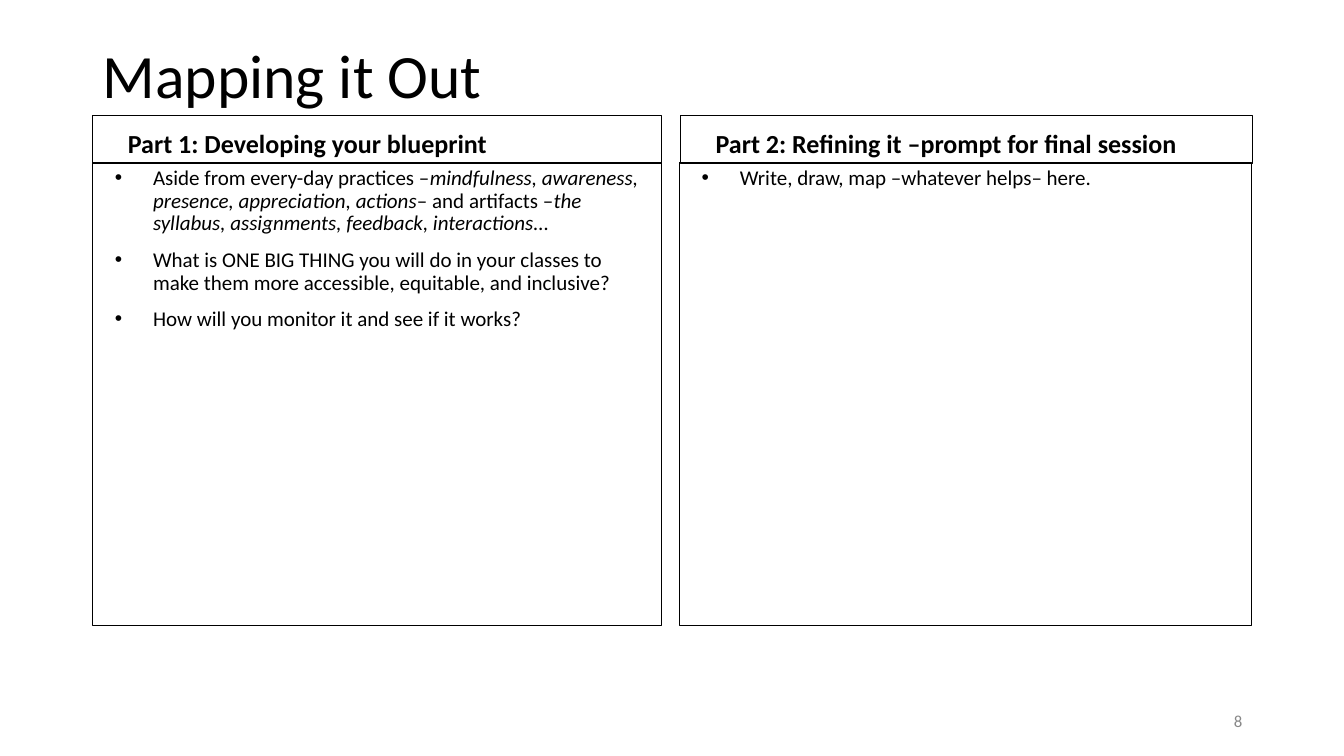
from pptx import Presentation
from pptx.dml.color import RGBColor
from pptx.enum.shapes import MSO_SHAPE
from pptx.enum.text import MSO_ANCHOR, PP_ALIGN
from pptx.oxml.ns import qn
from pptx.util import Inches, Pt
from lxml.etree import SubElement

COLORS = {"text": "000000", "border": "000000", "number": "888888"}
FONT = "Calibri"

PANEL_TOP, HEADING_H = 1.15, 0.47
BODY_TOP, BODY_H = 1.61, 4.6

# heading left, body left, width, heading, bullets as lists of (text, italic)
PANELS = [
    (0.92, 0.92, 5.64, "Part 1: Developing your blueprint", [
        [("Aside from every-day practices –", False),
         ("mindfulness, awareness, presence, appreciation, actions", True),
         ("– and artifacts –", False),
         ("the syllabus, assignments, feedback, interactions", True),
         ("…", False)],
        [("What is ONE BIG THING you will do in your classes to make them "
          "more accessible, equitable, and inclusive?", False)],
        [("How will you monitor it and see if it works?", False)],
    ]),
    (6.75, 6.74, 5.67, "Part 2: Refining it –prompt for final session", [
        [("Write, draw, map –whatever helps– here.", False)],
    ]),
]


def rgb(name):
    return RGBColor.from_string(COLORS[name])


def write(tf, paragraphs, size, color="text", bold=False, align=PP_ALIGN.LEFT,
          anchor=MSO_ANCHOR.TOP, spacing=None, before=0, margin=0, indent=0,
          bullet=None):
    """Fill a text frame with paragraphs, each a list of (text, italic) runs."""
    tf.word_wrap = True
    tf.vertical_anchor = anchor
    for i, runs in enumerate(paragraphs):
        p = tf.add_paragraph() if i else tf.paragraphs[0]
        p.alignment = align
        p.line_spacing = spacing
        p.space_before = Pt(before)
        pPr = p._p.get_or_add_pPr()
        pPr.set("marL", str(Inches(margin)))
        pPr.set("indent", str(Inches(indent)))
        if bullet:
            SubElement(pPr, qn("a:buFont")).set("typeface", "Arial")
            SubElement(pPr, qn("a:buChar")).set("char", bullet)
        for text, italic in runs:
            r = p.add_run()
            r.text = text
            r.font.name = FONT
            r.font.size = Pt(size)
            r.font.bold = bold
            r.font.italic = italic
            r.font.color.rgb = rgb(color)


class SlideBuilder:
    def __init__(self, prs):
        self.s = prs.slides.add_slide(prs.slide_layouts[6])

    def text(self, x, y, w, h, text, size, **fmt):
        sp = self.s.shapes.add_textbox(Inches(x), Inches(y), Inches(w), Inches(h))
        write(sp.text_frame, [[(text, False)]], size, **fmt)

    def box(self, x, y, w, h, paragraphs, size, **fmt):
        """Add an unfilled outlined rectangle with text."""
        sp = self.s.shapes.add_shape(
            MSO_SHAPE.RECTANGLE, Inches(x), Inches(y), Inches(w), Inches(h))
        sp.shadow.inherit = False
        sp.fill.background()
        sp.line.color.rgb = rgb("border")
        sp.line.width = Pt(0.75)
        write(sp.text_frame, paragraphs, size, **fmt)

    def panel(self, heading_x, body_x, w, heading, bullets):
        self.box(heading_x, PANEL_TOP, w, HEADING_H, [[(heading, False)]], 18.6,
                 bold=True, anchor=MSO_ANCHOR.BOTTOM, spacing=0.7, before=10,
                 margin=0.5, indent=-0.25)
        self.box(body_x, BODY_TOP, w, BODY_H, bullets, 15, spacing=0.9,
                 before=10, margin=0.5, indent=-0.38, bullet="•")


def main():
    prs = Presentation()
    prs.slide_width, prs.slide_height = Inches(13.33), Inches(7.5)
    slide = SlideBuilder(prs)
    slide.text(0.92, 0.4, 11.5, 1.45, "Mapping it Out", 44, spacing=0.9)
    for panel in PANELS:
        slide.panel(*panel)
    slide.text(9.42, 6.95, 3, 0.4, "8", 12, color="number",
               align=PP_ALIGN.RIGHT, anchor=MSO_ANCHOR.MIDDLE)
    prs.save("out.pptx")


if __name__ == "__main__":
    main()
